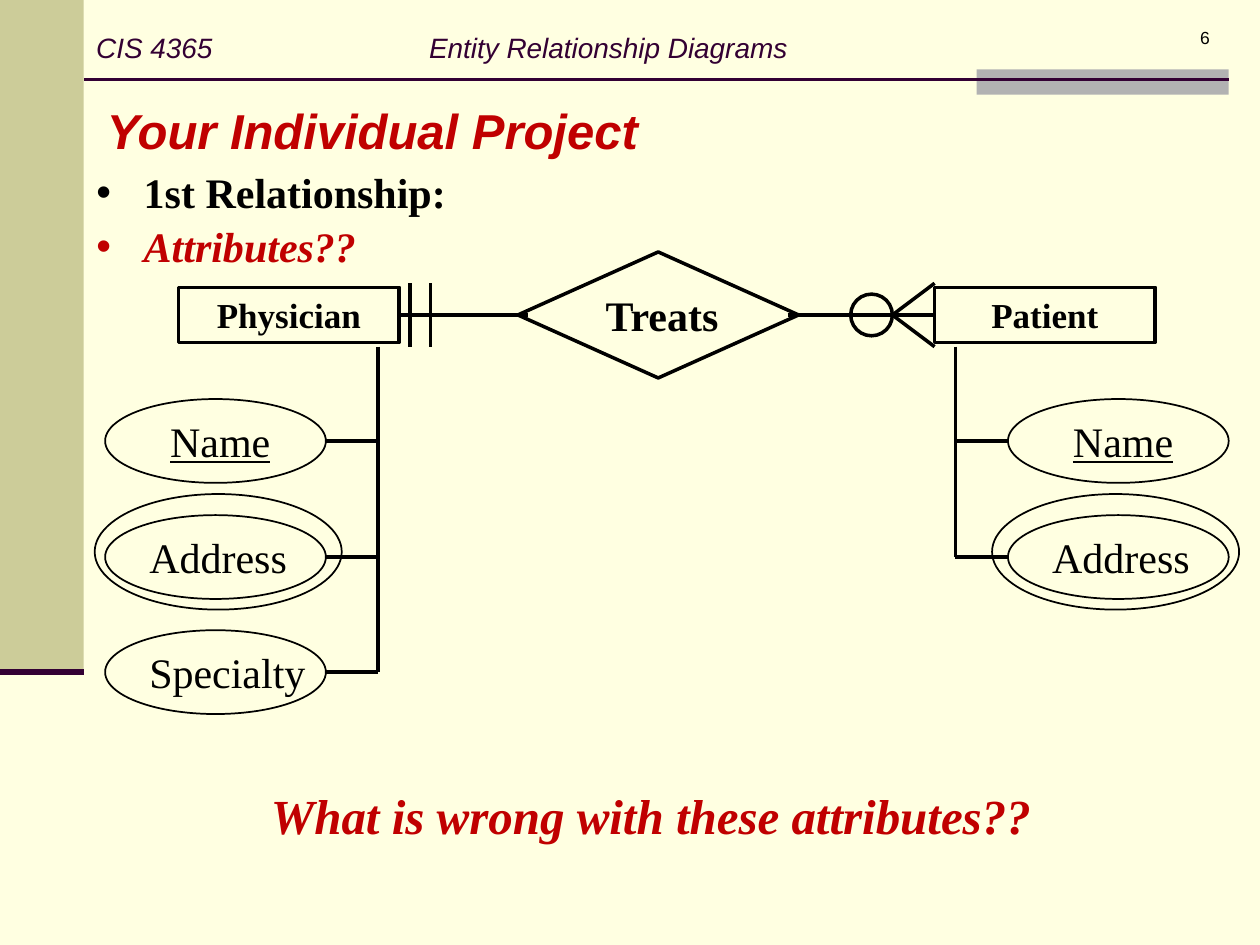
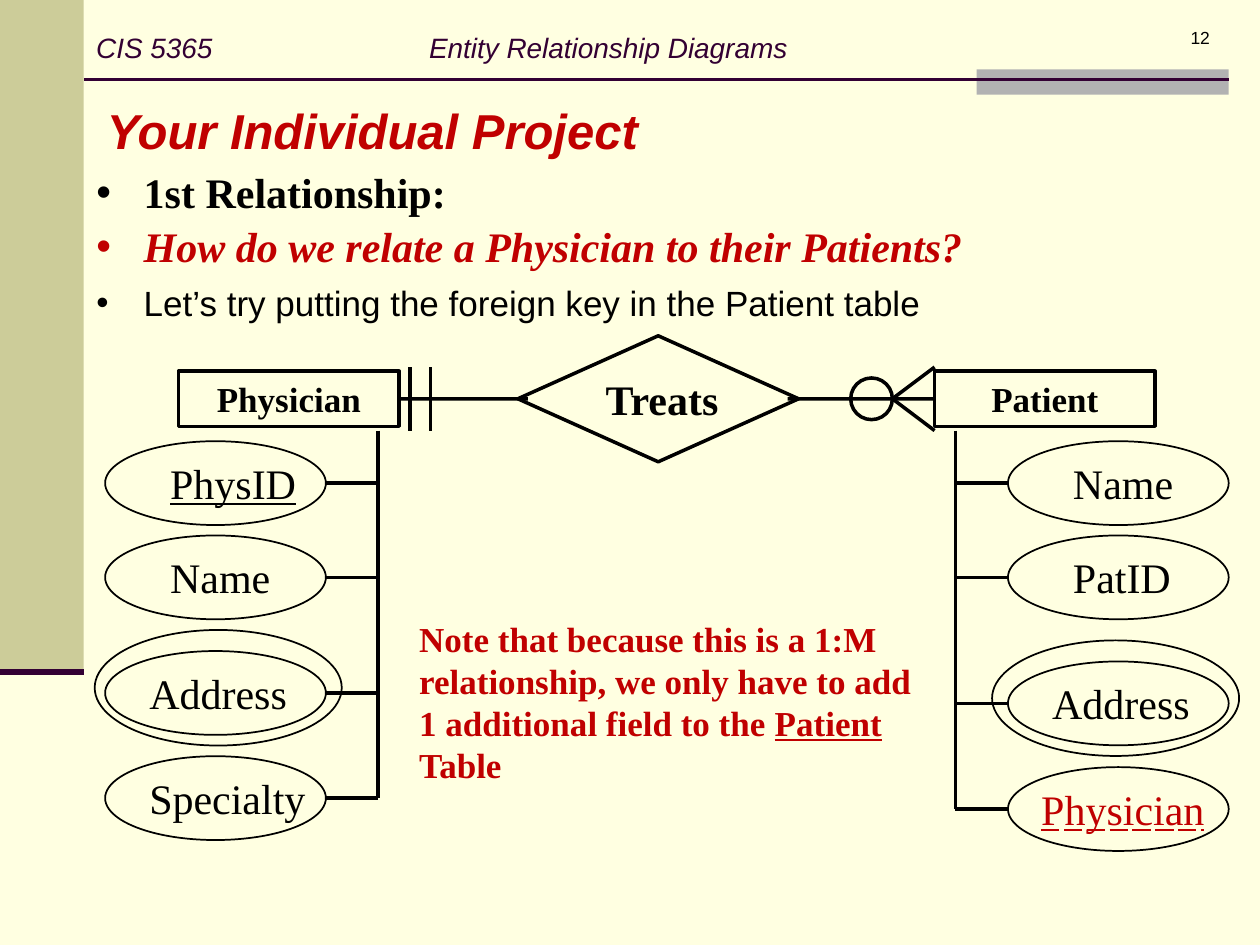
from lxml import etree
from pptx import Presentation
from pptx.dml.color import RGBColor
from pptx.enum.shapes import MSO_CONNECTOR, MSO_SHAPE
from pptx.enum.text import MSO_ANCHOR, MSO_AUTO_SIZE, MSO_UNDERLINE, PP_ALIGN
from pptx.oxml.ns import qn
from pptx.util import Cm, Pt

RECT, DIAMOND, OVAL = MSO_SHAPE.RECTANGLE, MSO_SHAPE.DIAMOND, MSO_SHAPE.OVAL
STRAIGHT = MSO_CONNECTOR.STRAIGHT
LEFT, CENTER, RIGHT = PP_ALIGN.LEFT, PP_ALIGN.CENTER, PP_ALIGN.RIGHT
TOP, MIDDLE = MSO_ANCHOR.TOP, MSO_ANCHOR.MIDDLE
FIXED = MSO_AUTO_SIZE.NONE
SOLID, DASHED = MSO_UNDERLINE.SINGLE_LINE, MSO_UNDERLINE.DASH_LONG_LINE

COLORS = {
    "page": "FFFFE1",
    "side_band": "CCCC99",
    "tab": "B2B2B2",
    "rule": "330033",
    "ink": "000000",
    "accent": "C00000",
}
SANS, SERIF = "Arial", "Times New Roman"


def write(holder, text, box=None, size=24, font=SERIF, color="ink", bold=False,
          italic=False, align=LEFT, anchor=TOP, underlined="", underline=SOLID):
    """Write into a paragraph, or into a new text box when holder is a slide."""
    paragraph = holder
    if box:
        frame = holder.shapes.add_textbox(*map(Cm, box)).text_frame
        frame.word_wrap = True
        frame.vertical_anchor = anchor
        paragraph = frame.paragraphs[0]
    paragraph.alignment = align
    for part in text.partition(underlined) if underlined else [text]:
        if part:
            run = paragraph.add_run()
            run.text = part
            run.font.name = font
            run.font.size = Pt(size)
            run.font.bold = bold
            run.font.italic = italic
            run.font.color.rgb = RGBColor.from_string(COLORS[color])
            if part == underlined:
                run.font.underline = underline


def draw_line(slide, x1, y1, x2, y2, color="ink", width=2):
    line = slide.shapes.add_connector(STRAIGHT, Cm(x1), Cm(y1), Cm(x2), Cm(y2))
    line.line.color.rgb = RGBColor.from_string(COLORS[color])
    line.line.width = Pt(width)
    etree.SubElement(line.element.spPr, qn("a:effectLst"))
    return line


# Bullets: text, space before, format
first_bullet = ("1st Relationship:", 0, dict(bold=True))
red_bullet = dict(bold=True, italic=True, color="accent")

# Attributes: name, centre height, label inset, label format
project_slides = [
    dict(
        course="CIS 4365", number="6", axis=6.35,
        bullets=[first_bullet, ("Attributes??", 6.5, red_bullet)],
        physician=[
            ("Name", 8.89, 1.06, dict(underlined="Name")),
            ("Address", 11.23, 0.64, {}),
            ("Specialty", 13.55, 0.64, {}),
        ],
        patient=[
            ("Name", 8.89, 1.06, dict(underlined="Name")),
            ("Address", 11.23, 0.64, {}),
        ],
        remark="What is wrong with these attributes??",
        remark_format=dict(box=(0.84, 15.72, 24.56, 1.45), size=28, italic=True,
                           align=CENTER),
    ),
    dict(
        course="CIS 5365", number="12", axis=8.04,
        bullets=[
            first_bullet,
            ("How do we relate a Physician to their Patients?", 6.5, red_bullet),
            ("Let’s try putting the foreign key in the Patient table", 9.5,
             dict(size=20, font=SANS)),
        ],
        physician=[
            ("PhysID", 9.74, 1.06, dict(underlined="PhysID")),
            ("Name", 11.64, 1.06, {}),
            ("Address", 13.97, 0.64, {}),
            ("Specialty", 16.09, 0.64, {}),
        ],
        patient=[
            ("Name", 9.74, 1.06, {}),
            ("PatID", 11.64, 1.06, {}),
            ("Address", 14.18, 0.64, {}),
            ("Physician", 16.31, 0.42,
             dict(color="accent", underlined="Physician", underline=DASHED)),
        ],
        remark="Note that because this is a 1:M relationship, we only have to add "
               "1 additional field to the Patient Table",
        remark_format=dict(box=(8.2, 12.32, 10.64, 3.68), size=20,
                           underlined="Patient"),
    ),
]

# Entity boxes and attribute ovals
entity_width, entity_height = 4.45, 1.11
physician_left, patient_left = 3.6, 18.84
oval_width, oval_height = 4.45, 1.69
# Stem x, oval left, oval edge facing the stem, left of the outer oval
sides = {
    "physician": (7.62, 2.12, 2.12 + oval_width, 1.91),
    "patient": (19.26, 20.32, 20.32, 20.0),
}

prs = Presentation()
prs.slide_width, prs.slide_height = Cm(25.4), Cm(19.05)
page = prs.slide_master.background.fill
page.solid()
page.fore_color.rgb = RGBColor.from_string(COLORS["page"])

for content in project_slides:
    slide = prs.slides.add_slide(prs.slide_layouts[1])
    axis = content["axis"]

    # Side band, tab and rules
    for color, box in [("side_band", (0, 0, 1.69, 13.55)),
                       ("tab", (19.69, 1.4, 5.08, 0.51))]:
        band = slide.shapes.add_shape(RECT, *map(Cm, box))
        band.shadow.inherit = False
        band.fill.solid()
        band.fill.fore_color.rgb = RGBColor.from_string(COLORS[color])
        band.line.fill.background()
    draw_line(slide, 1.69, 1.6, 24.77, 1.6, color="rule", width=1.5)
    draw_line(slide, 0, 13.55, 1.69, 13.55, color="rule", width=3.5)

    # Running header and slide number
    header = dict(size=16, font=SANS, color="rule", italic=True, anchor=MIDDLE)
    write(slide, content["course"], box=(1.69, 0, 5, 1.9), **header)
    write(slide, "Entity Relationship Diagrams", box=(8.4, 0, 9, 1.9), **header)
    write(slide, content["number"], box=(19.36, 0.43, 5.28, 1.27), size=10,
          font=SANS, align=RIGHT)

    # Title and bullets
    title, body = slide.shapes.title, slide.placeholders[1]
    for placeholder, box in [(title, (1.9, 1.9, 13.34, 1.45)),
                             (body, (1.69, 3.38, 23.5, 3.3))]:
        placeholder.left, placeholder.top, placeholder.width, placeholder.height = map(Cm, box)
        placeholder.text_frame.auto_size = FIXED
        placeholder.text_frame.vertical_anchor = TOP
    write(title.text_frame.paragraphs[0], "Your Individual Project", size=28,
          font=SANS, color="accent", bold=True, italic=True)
    for index, (text, space_before, text_format) in enumerate(content["bullets"]):
        frame = body.text_frame
        bullet = frame.add_paragraph() if index else frame.paragraphs[0]
        bullet.line_spacing = 0.85
        bullet.space_before = Pt(space_before)
        write(bullet, text, **text_format)

    # Outlines: entities, relationship, optional mark, attributes
    entity_top = axis - entity_height / 2
    outlines = [
        (RECT, (physician_left, entity_top, entity_width, entity_height), 2),
        (RECT, (patient_left, entity_top, entity_width, entity_height), 2),
        (DIAMOND, (10.44, axis - 1.27, 5.66, 2.54), 2),
        (OVAL, (17.15, axis - 0.42, 0.84, 0.84), 2),
    ]
    for side, (stem, oval_left, oval_edge, outer_left) in sides.items():
        for name, middle, inset, label_format in content[side]:
            outlines.append((OVAL, (oval_left, middle - oval_height / 2,
                                    oval_width, oval_height), 1))
            if name == "Address":
                outlines.append((OVAL, (outer_left, middle - 1.27, 4.98, 2.33), 1))
            draw_line(slide, oval_edge, middle, stem, middle)
            write(slide, name, box=(oval_left + inset, middle - 0.64, 3.81, 1.27),
                  **label_format)
        last_middle = content[side][-1][1]
        draw_line(slide, stem, axis + 0.64, stem, last_middle)

    outlined = []
    for kind, box, width in outlines:
        shape = slide.shapes.add_shape(kind, *map(Cm, box))
        shape.shadow.inherit = False
        shape.fill.background()
        shape.line.color.rgb = RGBColor.from_string(COLORS["ink"])
        shape.line.width = Pt(width)
        outlined.append(shape)
    physician, patient = outlined[:2]
    for entity, name in [(physician, "Physician"), (patient, "Patient")]:
        write(entity.text_frame.paragraphs[0], name, size=20, bold=True, align=CENTER)
    write(slide, "Treats", box=(11.96, axis - 0.64, 3.05, 1.27), bold=True)

    # Relationship lines with one-and-only-one bars and a crow's foot
    physician_link = draw_line(slide, physician_left + entity_width, axis, 10.64, axis)
    physician_link.begin_connect(physician, 3)
    patient_link = draw_line(slide, 15.88, axis, patient_left, axis)
    patient_link.end_connect(patient, 1)
    for bar in (8.26, 8.68):
        draw_line(slide, bar, axis - 0.64, bar, axis + 0.64)
    for spread in (-0.64, 0.64):
        draw_line(slide, 17.99, axis, patient_left, axis + spread)

    # Closing remark
    write(slide, content["remark"], color="accent", bold=True,
          **content["remark_format"])

prs.save("out.pptx")
